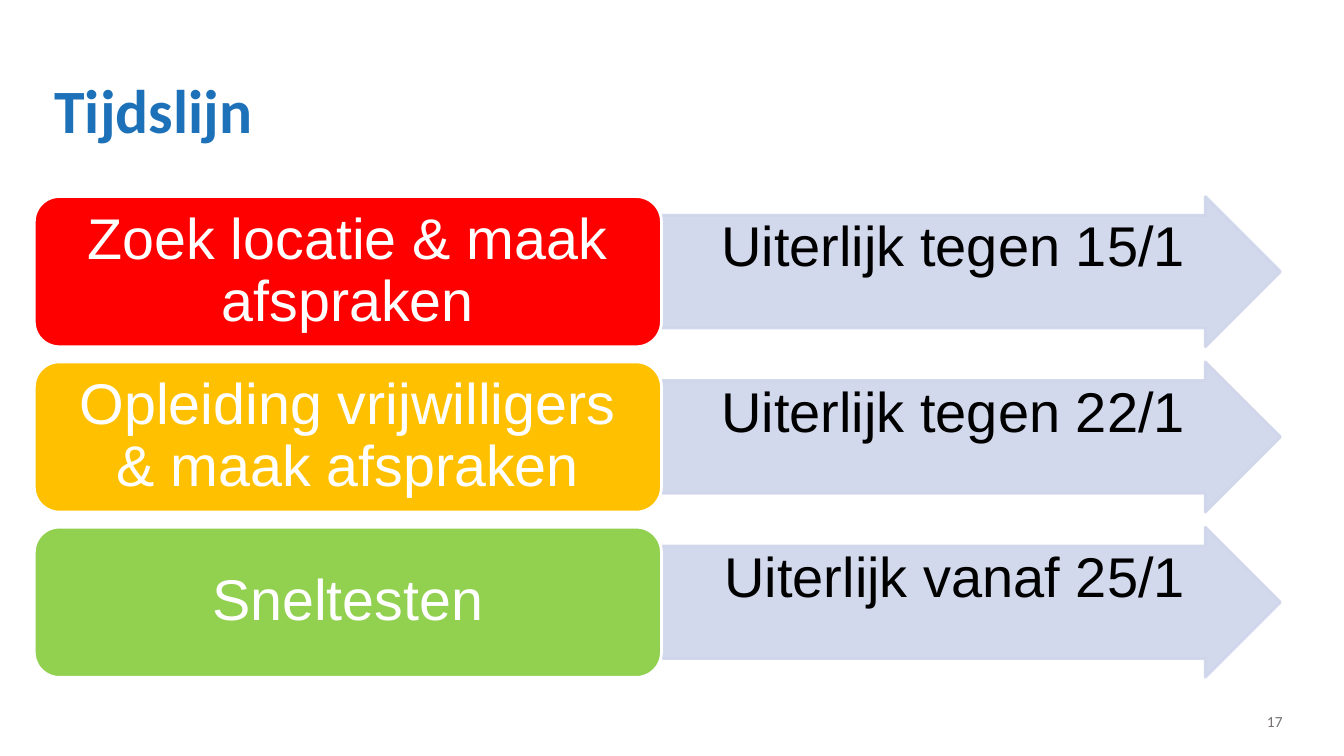
from lxml import etree
from pptx import Presentation
from pptx.dml.color import RGBColor
from pptx.enum.shapes import MSO_SHAPE as SHAPE
from pptx.enum.text import MSO_ANCHOR as ANCHOR, PP_ALIGN as ALIGN
from pptx.oxml.ns import qn
from pptx.util import Pt

PX = 9144
COLORS = {
    "title": "1D71B8", "arrow": "CFD5EA", "red": "FF0000", "amber": "FFC000",
    "green": "92D050", "white": "FFFFFF", "black": "000000", "grey": "757070",
}
STEPS = [
    ("Zoek locatie & maak afspraken", "red", "Uiterlijk tegen 15/1"),
    ("Opleiding vrijwilligers & maak afspraken", "amber", "Uiterlijk tegen 22/1"),
    ("Sneltesten", "green", "Uiterlijk vanaf 25/1"),
]
TOP, PITCH, HEIGHT = 195, 164, 149


def write(sp, text, size, color, font="Arial", bold=False, align=ALIGN.LEFT,
          anchor=ANCHOR.MIDDLE, insets=(10, 5, 10, 5), spacing=0.9):
    tf = sp.text_frame
    tf.word_wrap = True
    tf.vertical_anchor = anchor
    tf.margin_left, tf.margin_top, tf.margin_right, tf.margin_bottom = [
        n * PX for n in insets]
    p = tf.paragraphs[0]
    p.alignment = align
    p.line_spacing = spacing
    r = p.add_run()
    r.text = text
    r.font.size = Pt(size)
    r.font.name = font
    r.font.bold = bold
    r.font.color.rgb = RGBColor.from_string(COLORS[color])


def add_block(kind, box, fill, line, opacity=100):
    sp = s.shapes.add_shape(kind, *[n * PX for n in box])
    sp.shadow.inherit = False
    sp.fill.solid()
    sp.fill.fore_color.rgb = RGBColor.from_string(COLORS[fill])
    sp.line.color.rgb = RGBColor.from_string(COLORS[line])
    sp.line.width = Pt(2)
    if opacity < 100:
        for clr in sp._element.spPr.iter(qn("a:srgbClr")):
            etree.SubElement(clr, qn("a:alpha"), val=str(opacity * 1000))
    return sp


prs = Presentation()
prs.slide_width, prs.slide_height = 1333 * PX, 750 * PX
s = prs.slides.add_slide(prs.slide_layouts[5])

title = s.shapes.title
title.left, title.top, title.width, title.height = [
    n * PX for n in (44, 40, 1238, 145)]
write(title, "Tijdslijn", 44, "title", font="Calibri", bold=True)

for i, (task, color, deadline) in enumerate(STEPS):
    top = TOP + i * PITCH
    arrow = add_block(SHAPE.RIGHT_ARROW, (655, top, 615, HEIGHT),
                      "arrow", "arrow", opacity=90)
    arrow.adjustments[0] = 0.75
    arrow.adjustments[1] = 0.5
    write(arrow, deadline, 40, "black", align=ALIGN.RIGHT,
          anchor=ANCHOR.TOP, insets=(3, 3, 39, 3))
    box = add_block(SHAPE.ROUNDED_RECTANGLE, (34, top, 622, HEIGHT), color, "white")
    write(box, task, 41, "white", align=ALIGN.CENTER, insets=(17, 9, 17, 9))

number = s.shapes.add_textbox(*[n * PX for n in (982, 696, 300, 40)])
write(number, "17", 11, "grey", font="Calibri", align=ALIGN.RIGHT, spacing=1.0)

prs.save("out.pptx")
